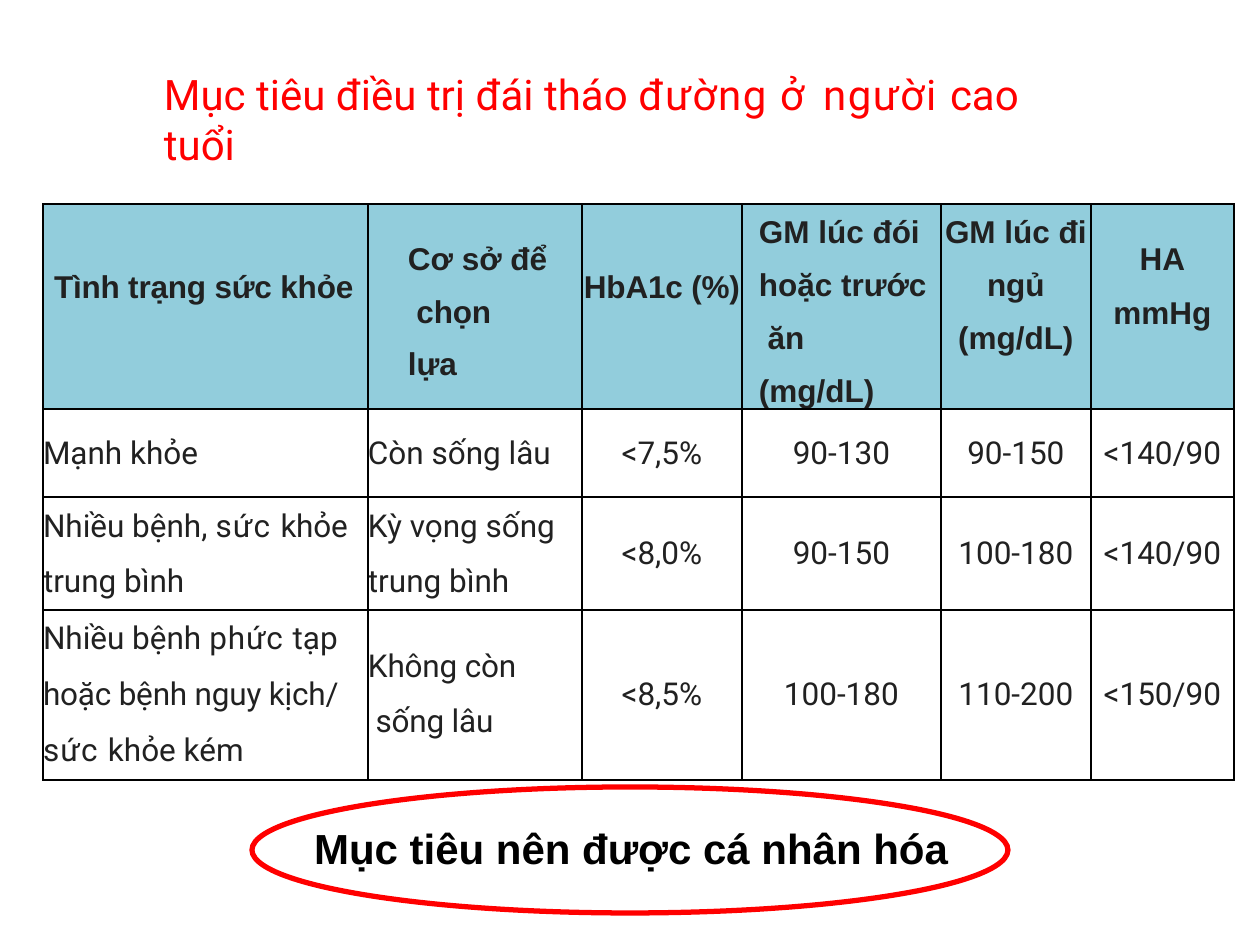
"""Build a slide of diabetes treatment targets for older adults."""
import pptx
import pptx.dml.color
import pptx.enum.shapes
import pptx.enum.text
import pptx.oxml
import pptx.oxml.ns
import pptx.util

PX = 914400 // 126
THEME = {
    "red": pptx.dml.color.RGBColor(0xFF, 0x00, 0x00),
    "black": pptx.dml.color.RGBColor(0x00, 0x00, 0x00),
    "ink": pptx.dml.color.RGBColor(0x21, 0x21, 0x21),
    "header": pptx.dml.color.RGBColor(0x92, 0xCD, 0xDC),
    "heading": pptx.util.Pt(24),
    "body": pptx.util.Pt(18),
    "gap": pptx.util.Pt(10.8),
}
LEFT = pptx.enum.text.PP_ALIGN.LEFT
CENTER = pptx.enum.text.PP_ALIGN.CENTER
TITLE_FONT = {"name": "Roboto", "size": THEME["heading"], "bold": False}
LABEL_FONT = {"name": "Arial", "size": THEME["heading"], "bold": True}
HEADER_FONT = {"name": "Arial", "size": THEME["body"], "bold": True}
BODY_FONT = {"name": "Roboto", "size": THEME["body"], "bold": False}


def write_lines(frame, lines, font, color, formats, indent=0):
    """Fill a text frame with paragraphs made of (text, spacing) spans."""
    for index, line in enumerate(lines):
        para = frame.add_paragraph() if index else frame.paragraphs[0]
        if index and "line_spacing" not in formats:
            para.space_before = THEME["gap"]
        for name, value in formats.items():
            setattr(para, name, value)
        para._p.get_or_add_pPr().set("marL", str(indent * PX))
        for text, spacing in [(line, 0)] if isinstance(line, str) else line:
            if text == "\v":
                para.add_line_break()
                continue
            span = para.add_run()
            span.text = text
            for name, value in font.items():
                setattr(span.font, name, value)
            span.font.color.rgb = color
            if spacing:
                span._r.get_or_add_rPr().set("spc", str(spacing))


def add_text(page, bounds, spans, font, color):
    """Place a text box with one paragraph."""
    box = page.shapes.add_textbox(*(value * PX for value in bounds))
    frame = box.text_frame
    settings = {"word_wrap": True, "margin_left": 0, "margin_right": 0, "margin_top": PX,
                "margin_bottom": 0, "auto_size": pptx.enum.text.MSO_AUTO_SIZE.SHAPE_TO_FIT_TEXT}
    for name, value in settings.items():
        setattr(frame, name, value)
    write_lines(frame, [spans], font, color, {"alignment": LEFT}, 1)


deck = pptx.Presentation()
deck.slide_width = 1260 * PX
deck.slide_height = 945 * PX
page = deck.slides.add_slide(deck.slide_layouts[6])

plain = {"alignment": LEFT}
centered = {"alignment": CENTER}
loose = {"alignment": LEFT, "line_spacing": 1.5}
loose_centered = {"alignment": CENTER, "line_spacing": 1.5}
break_span = ("\v", 0)

header = [
    (66, 11, plain, [[("Tình trạng sức khỏe", -10)]]),
    (20, 40, loose, [[("Cơ sở để", 0), break_span, (" chọn", -10), break_span, ("lựa", 0)]]),
    (66, 0, centered, [[("HbA1c (%)", -10)]]),
    (11, 17, plain, ["GM lúc đói"]),
    (11, 0, centered, ["GM lúc đi"]),
    (38, 0, centered, ["HA", "mmHg"]),
]
header_tails = {
    3: (17, loose, [("hoặc trước", 0), break_span, (" ăn", -10), break_span, ("(mg/dL)", 0)]),
    4: (0, loose_centered, [("ngủ", 10), break_span, ("(mg/dL)", 0)]),
}
body = [
    (26, [(26, plain, ["Mạnh khỏe"]), (26, plain, ["Còn sống lâu"])],
     ["<7,5%", "90-130", "90-150", "<140/90"]),
    (38, [(11, plain, [[("Nhiều bệnh, ", 0), ("sức ", 70), ("khỏe", -10)], "trung bình"]),
          (11, plain, ["Kỳ vọng sống", "trung bình"])],
     ["<8,0%", "90-150", "100-180", "<140/90"]),
    (66, [(11, plain, [[("Nhiều bệnh ", 0), ("phức ", 50), ("tạp", 0)],
                       [("hoặc bệnh nguy kịch/", -10)], [("sức ", 70), ("khỏe kém", 0)]]),
          (20, loose, [[("Không còn", -10), break_span, (" sống lâu", -10)]])],
     ["<8,5%", "100-180", "110-200", "<150/90"]),
]
rows = [header]
for inset, labels, values in body:
    rows.append([(top, 0, formats, lines) for top, formats, lines in labels]
                + [(inset, 0, centered, [value]) for value in values])

widths = [325, 214, 160, 199, 150, 143]
heights = [205, 88, 113, 170]
bounds = (43, 204, sum(widths), sum(heights))
table = page.shapes.add_table(len(rows), len(widths), *(value * PX for value in bounds)).table
table.first_row = False
table.horz_banding = False
for column, width in zip(table.columns, widths):
    column.width = width * PX
for row, height in zip(table.rows, heights):
    row.height = height * PX

for row_index, row in enumerate(rows):
    for column_index, (top, indent, formats, lines) in enumerate(row):
        cell = table.cell(row_index, column_index)
        margins = {"margin_left": 0, "margin_right": 0, "margin_top": top * PX, "margin_bottom": 0}
        for name, value in margins.items():
            setattr(cell, name, value)
        font = BODY_FONT if row_index else HEADER_FONT
        write_lines(cell.text_frame, lines, font, THEME["ink"], formats, indent)
        if row_index == 0 and column_index in header_tails:
            tail_indent, tail_formats, spans = header_tails[column_index]
            para = cell.text_frame.add_paragraph()
            for name, value in tail_formats.items():
                setattr(para, name, value)
            para._p.get_or_add_pPr().set("marL", str(tail_indent * PX))
            for text, spacing in spans:
                if text == "\v":
                    para.add_line_break()
                    continue
                span = para.add_run()
                span.text = text
                for name, value in font.items():
                    setattr(span.font, name, value)
                span.font.color.rgb = THEME["ink"]
        properties = cell._tc.get_or_add_tcPr()
        for side in ("lnL", "lnR", "lnT", "lnB"):
            properties.append(pptx.oxml.parse_xml(
                f'<a:{side} {pptx.oxml.ns.nsdecls("a")} w="12700"><a:solidFill>'
                f'<a:srgbClr val="{THEME["black"]}"/></a:solidFill></a:{side}>'))
        if row_index:
            cell.fill.background()
        else:
            cell.fill.solid()
            cell.fill.fore_color.rgb = THEME["header"]

title = [("Mục tiêu điều trị đái tháo ", 0), ("đường ", 90), ("ở ", 240),
         ("người ", 90), ("cao tuổi", 0)]
add_text(page, (163, 67, 920, 54), title, TITLE_FONT, THEME["red"])

ring = page.shapes.add_shape(pptx.enum.shapes.MSO_SHAPE.OVAL,
                             *(value * PX for value in (252, 787, 756, 126)))
ring.shadow.inherit = False
ring.fill.background()
ring.line.color.rgb = THEME["red"]
ring.line.width = pptx.util.Pt(3)

label = [("Mục tiêu nên được cá nhân hóa", 0)]
add_text(page, (313, 822, 660, 54), label, LABEL_FONT, THEME["black"])

deck.save("out.pptx")
